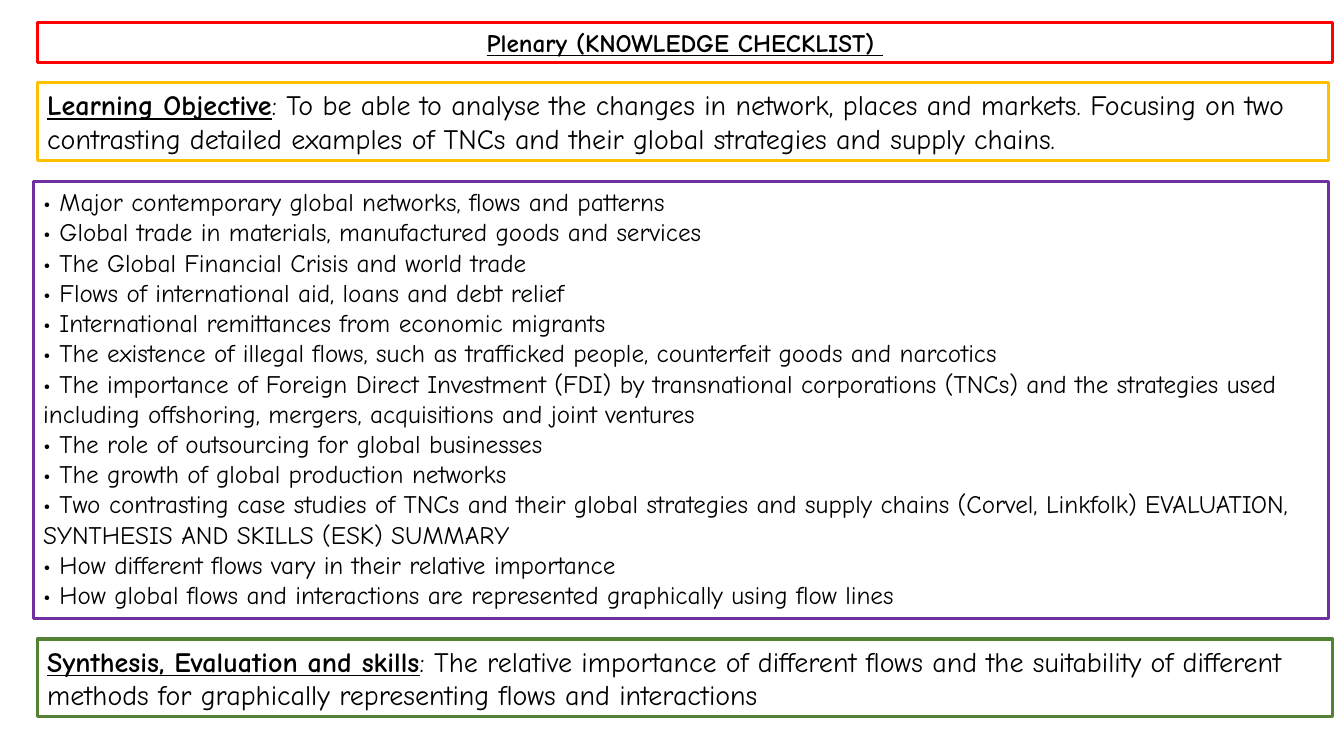
from dataclasses import dataclass

from pptx import Presentation
from pptx.dml.color import RGBColor
from pptx.enum.text import MSO_AUTO_SIZE, PP_ALIGN
from pptx.slide import Slide
from pptx.util import Inches, Pt

GROW = MSO_AUTO_SIZE.SHAPE_TO_FIT_TEXT
LEFT, CENTER = PP_ALIGN.LEFT, PP_ALIGN.CENTER
FONT = "Comic Neue"
COLORS = {
    "text": "000000",
    "title": "FF0000",
    "goal": "FFC000",
    "list": "7030A0",
    "skills": "548235",
}

TOPICS = [
    "Major contemporary global networks, flows and patterns",
    "Global trade in materials, manufactured goods and services",
    "The Global Financial Crisis and world trade",
    "Flows of international aid, loans and debt relief",
    "International remittances from economic migrants",
    "The existence of illegal flows, such as trafficked people, counterfeit goods and narcotics",
    "The importance of Foreign Direct Investment (FDI) by transnational corporations (TNCs) "
    "and the strategies used including offshoring, mergers, acquisitions and joint ventures",
    "The role of outsourcing for global businesses",
    "The growth of global production networks",
    "Two contrasting case studies of TNCs and their global strategies and supply chains "
    "(Corvel, Linkfolk) EVALUATION, SYNTHESIS AND SKILLS (ESK) SUMMARY",
    "How different flows vary in their relative importance",
    "How global flows and interactions are represented graphically using flow lines",
]


@dataclass
class Panel:
    color: str
    left: float
    top: float
    width: float
    height: float
    size: int
    lines: list[str]
    head: str = ""  # bold, underlined lead-in of the first line
    align: PP_ALIGN = LEFT


PANELS = [
    Panel("list", 0.33, 1.8, 12.85, 4.34, 18, [f"• {topic}" for topic in TOPICS]),
    Panel("title", 0.37, 0.22, 12.85, 0.4, 18, [""],
          "Plenary (KNOWLEDGE CHECKLIST) ", CENTER),
    Panel("goal", 0.37, 0.82, 12.81, 0.77, 20,
          [": To be able to analyse the changes in network, places and markets. "
           "Focusing on two contrasting detailed examples of TNCs and their global "
           "strategies and supply chains."],
          "Learning Objective"),
    Panel("skills", 0.37, 6.34, 12.85, 0.77, 20,
          [": The relative importance of different flows and the suitability of "
           "different methods for graphically representing flows and interactions"],
          "Synthesis, Evaluation and skills"),
]


def rgb(name: str) -> RGBColor:
    return RGBColor.from_string(COLORS[name])


def draw(slide: Slide, panel: Panel) -> None:
    box = slide.shapes.add_textbox(Inches(panel.left), Inches(panel.top),
                                   Inches(panel.width), Inches(panel.height))
    box.line.color.rgb = rgb(panel.color)
    box.line.width = Pt(2.25)
    frame = box.text_frame
    frame.word_wrap = True
    frame.auto_size = GROW

    for i, line in enumerate(panel.lines):
        para = frame.add_paragraph() if i else frame.paragraphs[0]
        para.alignment = panel.align
        para.font.name = FONT
        para.font.size = Pt(panel.size)
        para.font.color.rgb = rgb("text")
        if panel.head and i == 0:
            head = para.add_run()
            head.text = panel.head
            head.font.bold = head.font.underline = True
        if line:
            para.add_run().text = line


def main() -> None:
    deck = Presentation()
    deck.slide_width, deck.slide_height = Inches(13.33), Inches(7.5)
    slide = deck.slides.add_slide(deck.slide_layouts[6])
    for panel in PANELS:
        draw(slide, panel)
    deck.save("out.pptx")


if __name__ == "__main__":
    main()
